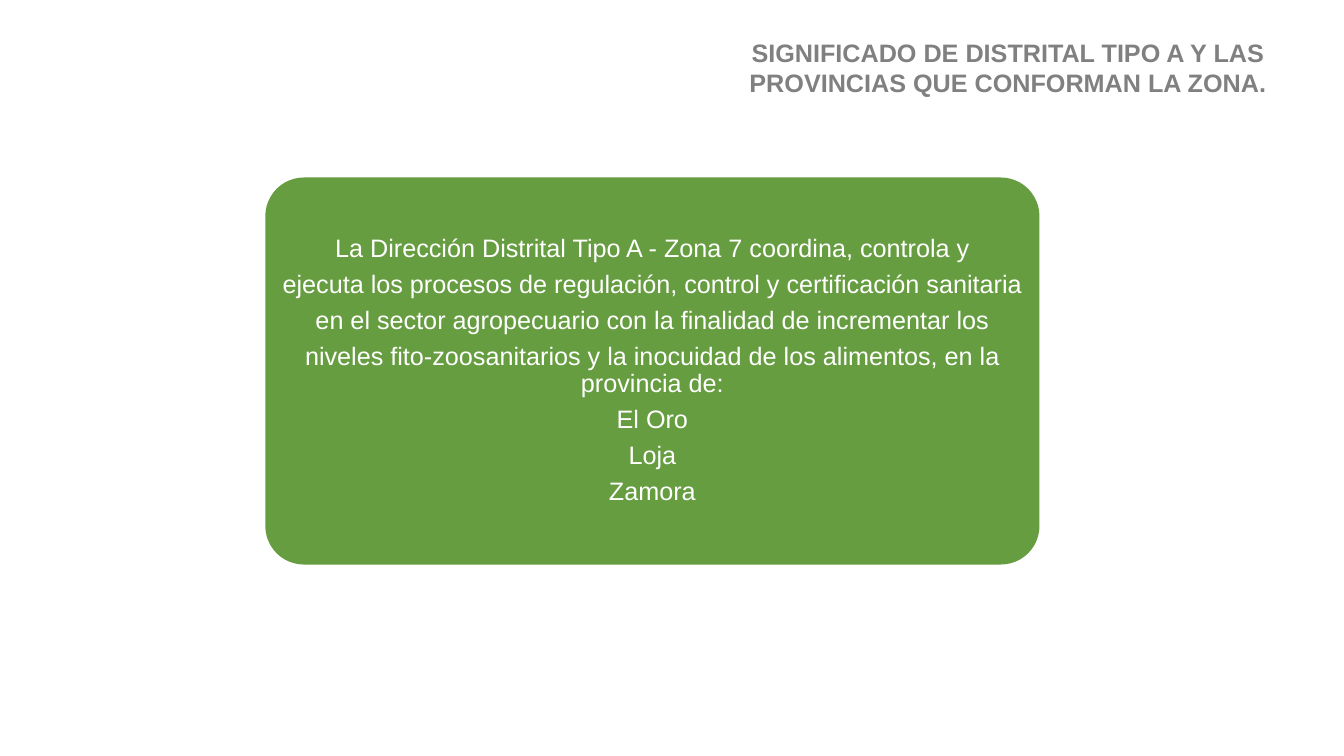
import pptx
import pptx.util
import pptx.dml.color
import pptx.enum.shapes
import pptx.enum.text

Pt = pptx.util.Pt


def color(code):
    return pptx.dml.color.RGBColor.from_string(code)


def write(frame, text, tint, bold=False, line=None, gap=0):
    """Fill a frame with one centred paragraph per line of text."""
    frame.word_wrap = True
    for i, words in enumerate(text.split("\n")):
        para = frame.paragraphs[0] if i == 0 else frame.add_paragraph()
        para.text = words
        para.alignment = pptx.enum.text.PP_ALIGN.CENTER
        para.line_spacing = line
        para.space_after = Pt(gap)
        para.font.name = "Arial"
        para.font.size = Pt(18)
        para.font.bold = bold
        para.font.color.rgb = color(tint)


deck = pptx.Presentation()
deck.slide_width = Pt(960)
deck.slide_height = Pt(540)
slide = deck.slides.add_slide(deck.slide_layouts[6])

title = slide.shapes.add_textbox(Pt(480), Pt(23), Pt(480), Pt(73))
write(
    title.text_frame,
    "SIGNIFICADO DE DISTRITAL TIPO A Y LAS PROVINCIAS QUE CONFORMAN LA ZONA.",
    "808080",
    bold=True,
)

card = slide.shapes.add_shape(
    pptx.enum.shapes.MSO_SHAPE.ROUNDED_RECTANGLE,
    Pt(189.5), Pt(126.8), Pt(553), Pt(276.5),
)
card.adjustments[0] = 0.1
card.shadow.inherit = False
card.fill.solid()
card.fill.fore_color.rgb = color("669D40")
card.line.fill.background()

frame = card.text_frame
frame.vertical_anchor = pptx.enum.text.MSO_ANCHOR.MIDDLE
frame.margin_left = frame.margin_right = Pt(2.7)
frame.margin_top = frame.margin_bottom = Pt(2)
write(
    frame,
    """La Dirección Distrital Tipo A - Zona 7 coordina, controla y
ejecuta los procesos de regulación, control y certificación sanitaria
en el sector agropecuario con la finalidad de incrementar los
niveles fito-zoosanitarios y la inocuidad de los alimentos, en la provincia de:
El Oro
Loja
Zamora""",
    "FFFFFF",
    line=0.9,
    gap=6.3,
)

deck.save("out.pptx")
